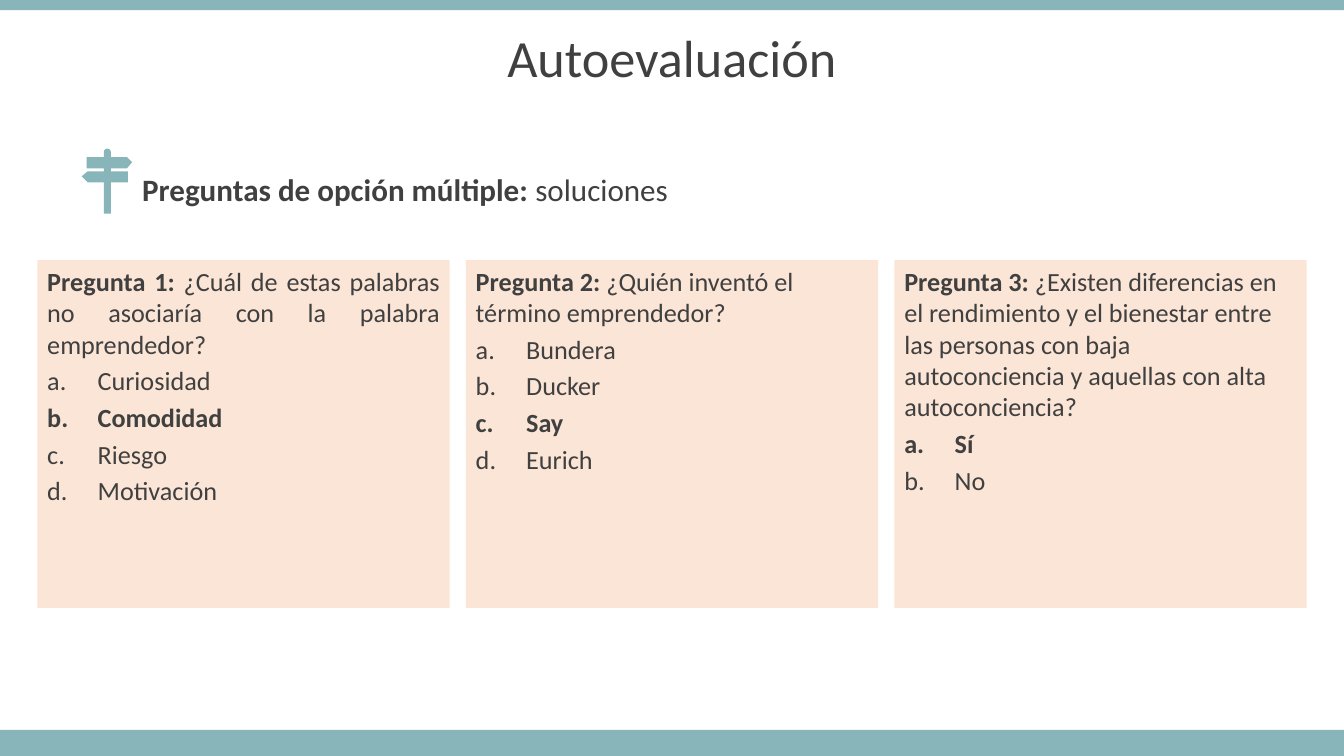
import math

from lxml import etree
from pptx import Presentation
from pptx.dml.color import RGBColor
from pptx.enum.shapes import MSO_SHAPE
from pptx.enum.text import MSO_ANCHOR, MSO_AUTO_SIZE, PP_ALIGN
from pptx.oxml.ns import qn
from pptx.util import Inches, Pt

RECTANGLE = MSO_SHAPE.RECTANGLE
TOP, MIDDLE = MSO_ANCHOR.TOP, MSO_ANCHOR.MIDDLE
NO_AUTOFIT = MSO_AUTO_SIZE.NONE
LEFT, CENTER, JUSTIFY = PP_ALIGN.LEFT, PP_ALIGN.CENTER, PP_ALIGN.JUSTIFY

COLORS = {"teal": "87B5BA", "peach": "FBE5D6", "text": "404040"}
FONT = "Calibri"
PAGE_WIDTH, PAGE_HEIGHT = 13.33, 7.5
CARD_LEFT, CARD_TOP, CARD_WIDTH, CARD_HEIGHT, CARD_STEP = 0.37, 2.58, 4.09, 3.45, 4.25
CARD_SIZE = 18.7

QUESTIONS = [
    ("Pregunta 1: ", "¿Cuál de estas palabras no asociaría con la palabra emprendedor?",
     ["Curiosidad", "Comodidad", "Riesgo", "Motivación"], "Comodidad", JUSTIFY),
    ("Pregunta 2: ", "¿Quién inventó el término emprendedor?",
     ["Bundera", "Ducker", "Say", "Eurich"], "Say", LEFT),
    ("Pregunta 3: ",
     "¿Existen diferencias en el rendimiento y el bienestar entre las personas con baja "
     "autoconciencia y aquellas con alta autoconciencia?",
     ["Sí", "No"], "Sí", LEFT),
]

POST_LEFT, POST_RIGHT, CAP_CENTER = 1.03, 1.1, 1.51
POST_CENTER = (POST_LEFT + POST_RIGHT) / 2
POST_RADIUS = (POST_RIGHT - POST_LEFT) / 2
SIGNPOST_CAP = [
    (POST_CENTER - POST_RADIUS * math.cos(math.pi * step / 12),
     CAP_CENTER - POST_RADIUS * math.sin(math.pi * step / 12))
    for step in range(13)
]
SIGNPOST_ARMS = [
    (1.1, 1.56), (1.26, 1.56), (1.31, 1.61), (1.26, 1.67), (1.1, 1.67),
    (1.1, 1.7), (1.27, 1.7), (1.27, 1.81), (1.1, 1.81), (1.1, 2.12),
    (1.03, 2.12), (1.03, 1.81), (0.87, 1.81), (0.81, 1.75), (0.87, 1.7),
    (1.03, 1.7), (1.03, 1.67), (0.86, 1.67), (0.86, 1.56), (1.03, 1.56),
]


class SlideBuilder:
    def __init__(self, page):
        self.page = page

    def paint(self, shape, color):
        shape.shadow.inherit = False
        shape.fill.solid()
        shape.fill.fore_color.rgb = RGBColor.from_string(COLORS[color])
        shape.line.fill.background()

    def box(self, left, top, width, height, color):
        shape = self.page.shapes.add_shape(
            RECTANGLE, Inches(left), Inches(top), Inches(width), Inches(height))
        self.paint(shape, color)
        return shape

    def outline(self, points, color):
        scaled = [(Inches(x), Inches(y)) for x, y in points]
        builder = self.page.shapes.build_freeform(*scaled[0])
        builder.add_line_segments(scaled[1:], close=True)
        self.paint(builder.convert_to_shape(), color)

    def fill_para(self, para, spans, size, align=LEFT, before=0, spacing=1.0):
        para.alignment = align
        para.space_before = Pt(before)
        para.line_spacing = spacing
        para.font.name = FONT
        para.font.size = Pt(size)
        para.font.color.rgb = RGBColor.from_string(COLORS["text"])
        for text, bold in spans:
            span = para.add_run()
            span.text = text
            span.font.bold = bold

    def bullet(self, para, numbering=None, indent=0):
        properties = para._p.get_or_add_pPr()
        properties.set("marL", str(Inches(indent)))
        properties.set("indent", str(-Inches(indent)))
        if numbering:
            etree.SubElement(properties, qn("a:buFont"), typeface="+mj-lt")
            etree.SubElement(properties, qn("a:buAutoNum"), type=numbering)
        else:
            etree.SubElement(properties, qn("a:buNone"))
        defaults = properties.find(qn("a:defRPr"))
        if defaults is not None:
            properties.append(defaults)

    def placeholder(self, holder, place, spans, size, align, spacing):
        holder.left, holder.top, holder.width, holder.height = map(Inches, place)
        frame = holder.text_frame
        frame.word_wrap = True
        frame.auto_size = NO_AUTOFIT
        frame.vertical_anchor = MIDDLE
        para = frame.paragraphs[0]
        self.fill_para(para, spans, size, align, 10, spacing)
        self.bullet(para)

    def card(self, left, label, question, options, answer, align):
        frame = self.box(left, CARD_TOP, CARD_WIDTH, CARD_HEIGHT, "peach").text_frame
        frame.word_wrap = True
        frame.vertical_anchor = TOP
        before = CARD_SIZE * 0.2
        self.fill_para(frame.paragraphs[0], [(label, True), (question, False)],
                       CARD_SIZE, align, before)
        for option in options:
            para = frame.add_paragraph()
            self.fill_para(para, [(option, option == answer)], CARD_SIZE, LEFT, before)
            self.bullet(para, "alphaLcPeriod", 0.5)


def main():
    deck = Presentation()
    deck.slide_width = Inches(PAGE_WIDTH)
    deck.slide_height = Inches(PAGE_HEIGHT)
    page = deck.slides.add_slide(deck.slide_layouts[1])
    builder = SlideBuilder(page)
    builder.box(0, 7.24, PAGE_WIDTH, 0.26, "teal")
    builder.box(0, 0, PAGE_WIDTH, 0.1, "teal")
    builder.placeholder(page.shapes.title, (0, 0.18, PAGE_WIDTH, 0.84),
                        [("Autoevaluación", False)], 37.3, CENTER, 0.9)
    builder.placeholder(page.placeholders[1], (1.31, 1.71, 8.92, 0.41),
                        [("Preguntas de opción múltiple: ", True), ("soluciones", False)],
                        22.2, LEFT, 0.8)
    builder.outline(SIGNPOST_CAP + SIGNPOST_ARMS, "teal")
    for index, question in enumerate(QUESTIONS):
        builder.card(CARD_LEFT + index * CARD_STEP, *question)
    deck.save("out.pptx")


if __name__ == "__main__":
    main()
